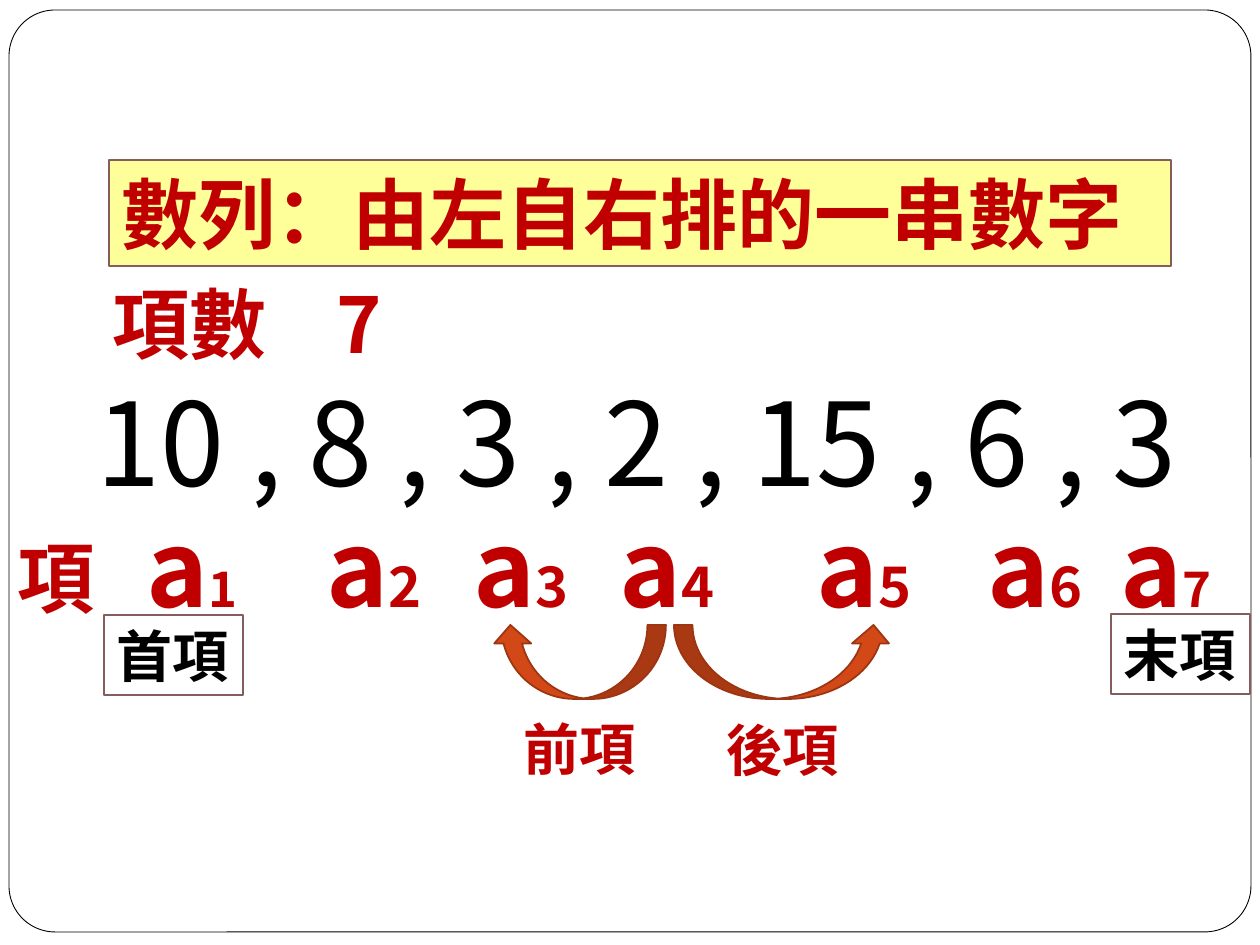
from lxml import etree
from pptx import Presentation
from pptx.dml.color import RGBColor
from pptx.enum.shapes import MSO_SHAPE
from pptx.enum.text import MSO_ANCHOR
from pptx.oxml.ns import qn
from pptx.util import Pt

RECT = MSO_SHAPE.RECTANGLE
ROUNDED = MSO_SHAPE.ROUNDED_RECTANGLE
CURVED_ARROW = MSO_SHAPE.CURVED_UP_ARROW
MIDDLE = MSO_ANCHOR.MIDDLE

PX = 914400 // 126
FONT = "Noto Sans CJK SC"
COLORS = {"red": "C00000", "black": "000000", "white": "FFFFFF", "yellow": "FFFF99",
          "border": "855D5D", "arrow": "D34817", "arrow_edge": "9C3511"}

prs = Presentation()
prs.slide_width, prs.slide_height = 1260 * PX, 945 * PX
s = prs.slides.add_slide(prs.slide_layouts[6])


def add_box(kind, box, fill=None, line=None, width=1):
    """Add a preset shape, or a text box when kind is None; box is in px."""
    box = [v * PX for v in box]
    if kind is None:
        sp = s.shapes.add_textbox(*box)
    else:
        sp = s.shapes.add_shape(kind, *box)
        sp.shadow.inherit = False
        if fill:
            sp.fill.solid()
            sp.fill.fore_color.rgb = RGBColor.from_string(COLORS[fill])
        else:
            sp.fill.background()
        sp.line.color.rgb = RGBColor.from_string(COLORS[line])
        sp.line.width = Pt(width)
    return sp


def write(sp, runs, color="red", bold=True, tabs=()):
    """Write (text, size) runs on one line, with tab stops in px."""
    tf = sp.text_frame
    tf.word_wrap = True
    tf.vertical_anchor = MIDDLE
    p = tf.paragraphs[0]
    p.alignment = 1
    if tabs:
        tab_list = etree.SubElement(p._p.get_or_add_pPr(), qn("a:tabLst"))
        for x in tabs:
            etree.SubElement(tab_list, qn("a:tab"), pos=str(x * PX), algn="l")
    for text, size in runs:
        r = p.add_run()
        r.text = text
        r.font.size = Pt(size)
        r.font.bold = bold
        r.font.name = FONT
        r.font.color.rgb = RGBColor.from_string(COLORS[color])
        etree.SubElement(r._r.get_or_add_rPr(), qn("a:ea"), typeface=FONT)


frame = add_box(ROUNDED, (9, 10, 1242, 922), "white", "black", 0.5)
frame.adjustments[0] = 0.05

title = add_box(RECT, (109, 160, 1062, 106), "yellow", "border")
write(title, [("數列：由左自右排的一串數字", 44)])

# Terms a1 to a7, each on a tab stop under its number
term_stops = [129, 309, 456, 602, 799, 970, 1103]
term_runs = [("項", 44)]
for n, size in enumerate([28, 32, 32, 32, 32, 32, 28], 1):
    term_runs += [("\ta", 60), (str(n), size)]
write(add_box(None, (5, 496, 1230, 140)), term_runs, tabs=term_stops)

numbers = add_box(None, (84, 364, 1150, 152))
write(numbers, [("10 , 8 , 3 , 2 , 15 , 6 , 3", 66)], "black", False)

count = add_box(None, (100, 270, 1062, 106))
write(count, [("項數\t7", 44)], tabs=[224])

labels = [("首項", (104, 615, 139, 80), "border", "black"),
          ("末項", (1111, 614, 139, 80), "border", "black"),
          ("前項", (511, 708, 145, 80), "white", "red"),
          ("後項", (714, 709, 139, 80), "white", "red")]
for text, box, line, color in labels:
    write(add_box(RECT, box, None, line), [(text, 32)], color)

to_previous = add_box(CURVED_ARROW, (492, 625, 174, 74), "arrow", "arrow_edge")
to_previous._element.spPr.xfrm.set("flipH", "1")
add_box(CURVED_ARROW, (674, 625, 218, 74), "arrow", "arrow_edge")

prs.save("out.pptx")
